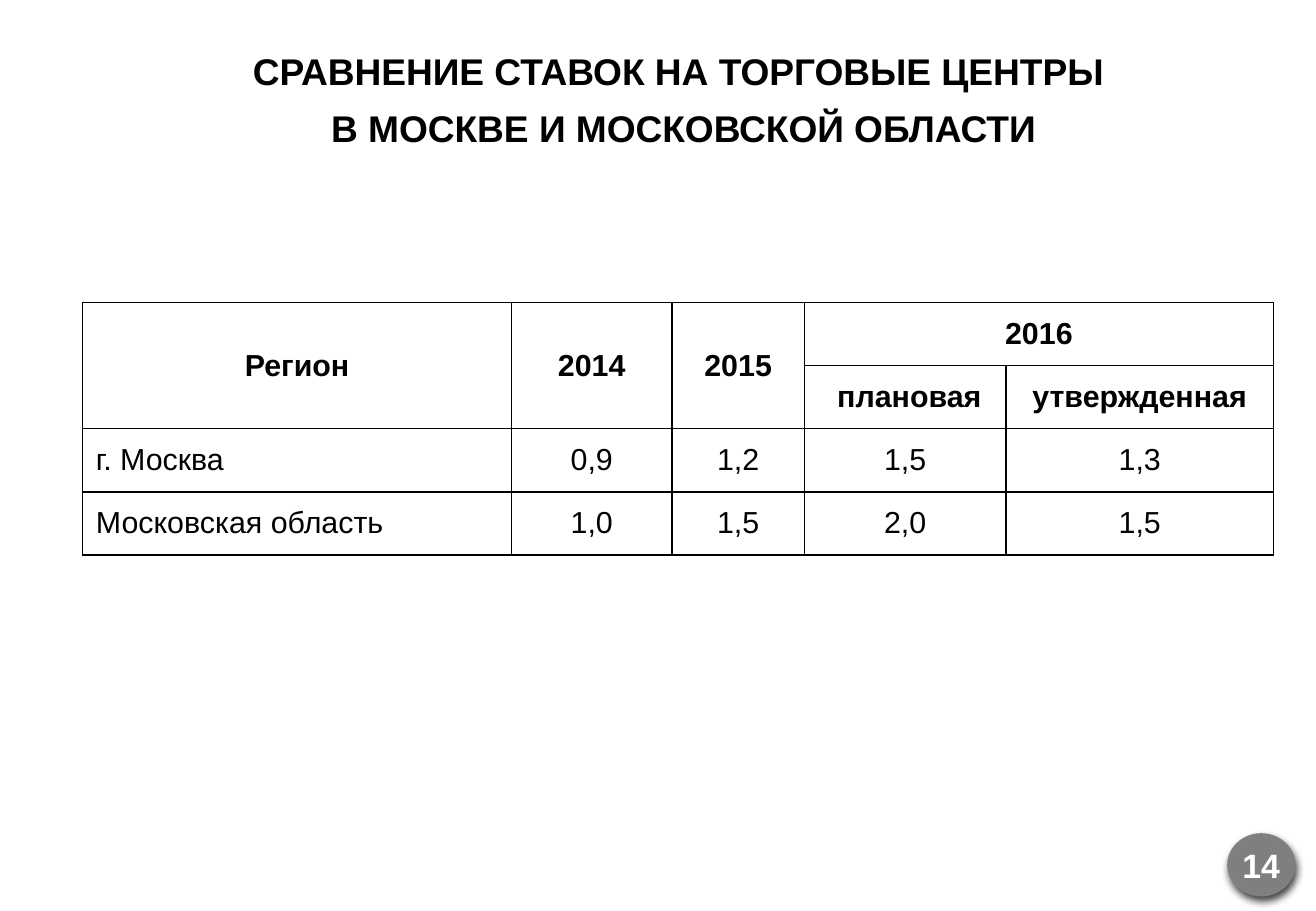
from lxml import etree
from pptx import Presentation
from pptx.dml.color import RGBColor
from pptx.enum.shapes import MSO_SHAPE
from pptx.enum.text import MSO_ANCHOR, MSO_AUTO_SIZE, PP_ALIGN
from pptx.oxml import parse_xml
from pptx.util import Inches, Pt

LEFT, CENTER = PP_ALIGN.LEFT, PP_ALIGN.CENTER
TOP, MIDDLE = MSO_ANCHOR.TOP, MSO_ANCHOR.MIDDLE
NO_AUTOFIT = MSO_AUTO_SIZE.NONE
OVAL = MSO_SHAPE.OVAL
TITLE_ONLY = 5
DRAWING_NS = "http://schemas.openxmlformats.org/drawingml/2006/main"

HEADING = [
    "СРАВНЕНИЕ СТАВОК НА ТОРГОВЫЕ ЦЕНТРЫ ",
    "В МОСКВЕ И МОСКОВСКОЙ ОБЛАСТИ",
]
# None marks a cell covered by a merged neighbour
RATES = [
    ["Регион", "2014", "2015", "2016", None],
    [None, None, None, " плановая", "утвержденная"],
    ["г. Москва", "0,9", "1,2", "1,5", "1,3"],
    ["Московская область", "1,0", "1,5", "2,0", "1,5"],
]
HEADER_ROWS = 2
MERGES = [((0, 0), (1, 0)), ((0, 1), (1, 1)), ((0, 2), (1, 2)), ((0, 3), (0, 4))]
COLUMN_WIDTHS = [3.53, 1.32, 1.09, 1.66, 2.2]
ROW_HEIGHT = 0.52
PAGE_NUMBER = "14"

FONT = "Arial"
BLACK, WHITE, GREY, GREY_EDGE = "000000", "FFFFFF", "7F7F7F", "808080"


def color(hex_code):
    return RGBColor.from_string(hex_code)


def write(frame, lines, size, bold=False, ink=BLACK, align=CENTER,
          before=0, anchor=MIDDLE):
    """Fill a text frame with one paragraph per line."""
    frame.vertical_anchor = anchor
    for index, line in enumerate(lines):
        paragraph = frame.paragraphs[0] if index == 0 else frame.add_paragraph()
        paragraph.alignment = align
        paragraph.line_spacing = 1
        paragraph.space_before = Pt(before)
        run = paragraph.add_run()
        run.text = line
        run.font.name, run.font.size, run.font.bold = FONT, Pt(size), bold
        run.font.color.rgb = color(ink)


def set_margins(target, horizontal, vertical):
    target.margin_left = target.margin_right = Inches(horizontal)
    target.margin_top = target.margin_bottom = Inches(vertical)


def add_borders(cell, width=1):
    properties = cell._tc.get_or_add_tcPr()
    for index, side in enumerate(("lnL", "lnR", "lnT", "lnB")):
        properties.insert(index, parse_xml(
            f'<a:{side} xmlns:a="{DRAWING_NS}" w="{Pt(width)}"><a:solidFill>'
            f'<a:srgbClr val="{BLACK}"/></a:solidFill></a:{side}>'))


def add_shadow(shape, blur, distance, angle, opacity):
    shape.shadow.inherit = False
    effects = shape._element.spPr.find(f"{{{DRAWING_NS}}}effectLst")
    shadow = etree.SubElement(
        effects, f"{{{DRAWING_NS}}}outerShdw", blurRad=str(Pt(blur)),
        dist=str(Pt(distance)), dir=str(angle * 60000), algn="tl", rotWithShape="0")
    shade = etree.SubElement(shadow, f"{{{DRAWING_NS}}}srgbClr", val=BLACK)
    etree.SubElement(shade, f"{{{DRAWING_NS}}}alpha", val=str(opacity * 1000))


def place_heading(slide):
    heading = slide.shapes.title
    heading.left, heading.top = Inches(0.76), Inches(0.35)
    heading.width, heading.height = Inches(9.73), Inches(0.93)
    frame = heading.text_frame
    frame.word_wrap = True
    frame.auto_size = NO_AUTOFIT
    set_margins(frame, 0.1, 0.05)
    write(frame, HEADING, 22, bold=True, before=7, anchor=TOP)


def add_rates(slide):
    table = slide.shapes.add_table(
        len(RATES), len(COLUMN_WIDTHS), Inches(0.68), Inches(2.49),
        Inches(sum(COLUMN_WIDTHS)), Inches(ROW_HEIGHT * len(RATES))).table
    table.first_row = table.horz_banding = False
    for column, width in zip(table.columns, COLUMN_WIDTHS):
        column.width = Inches(width)
    for row in table.rows:
        row.height = Inches(ROW_HEIGHT)
    for first, last in MERGES:
        table.cell(*first).merge(table.cell(*last))
    for r, row in enumerate(RATES):
        for c, value in enumerate(row):
            cell = table.cell(r, c)
            set_margins(cell, 0.11, 0.05)
            cell.vertical_anchor = MIDDLE
            cell.fill.solid()
            cell.fill.fore_color.rgb = color(WHITE)
            add_borders(cell)
            if value is not None:
                is_header = r < HEADER_ROWS
                align = CENTER if is_header or c else LEFT
                write(cell.text_frame, [value], 18, bold=is_header, align=align)


def add_page_badge(slide):
    badge = slide.shapes.add_shape(
        OVAL, Inches(10.11), Inches(6.87), Inches(0.54), Inches(0.5))
    badge.fill.solid()
    badge.fill.fore_color.rgb = color(GREY)
    badge.line.color.rgb = color(GREY_EDGE)
    badge.line.width = Pt(1.5)
    add_shadow(badge, blur=5, distance=3.2, angle=72, opacity=75)
    set_margins(badge.text_frame, 0, 0)
    write(badge.text_frame, [PAGE_NUMBER], 20, bold=True, ink=WHITE)


def main():
    deck = Presentation()
    deck.slide_width, deck.slide_height = Inches(10.83), Inches(7.5)
    slide = deck.slides.add_slide(deck.slide_layouts[TITLE_ONLY])
    place_heading(slide)
    add_rates(slide)
    add_page_badge(slide)
    deck.save("out.pptx")


if __name__ == "__main__":
    main()
